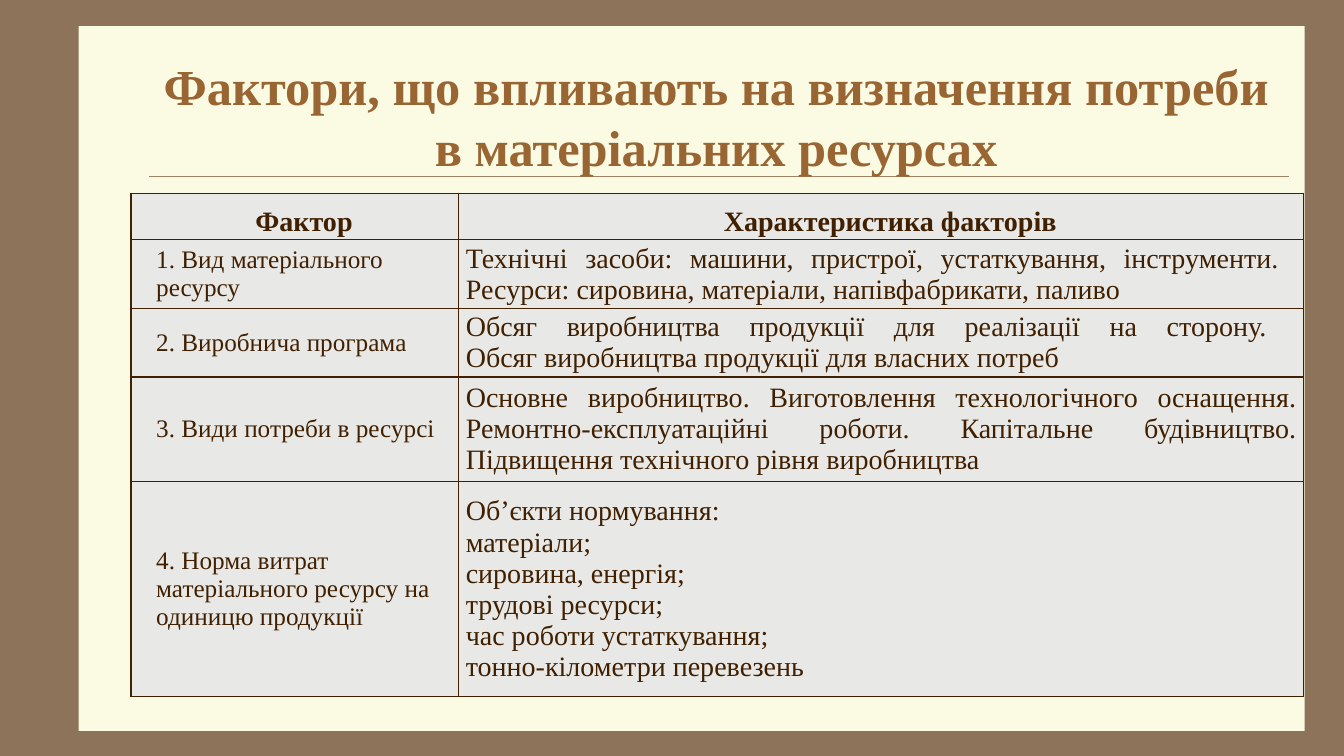
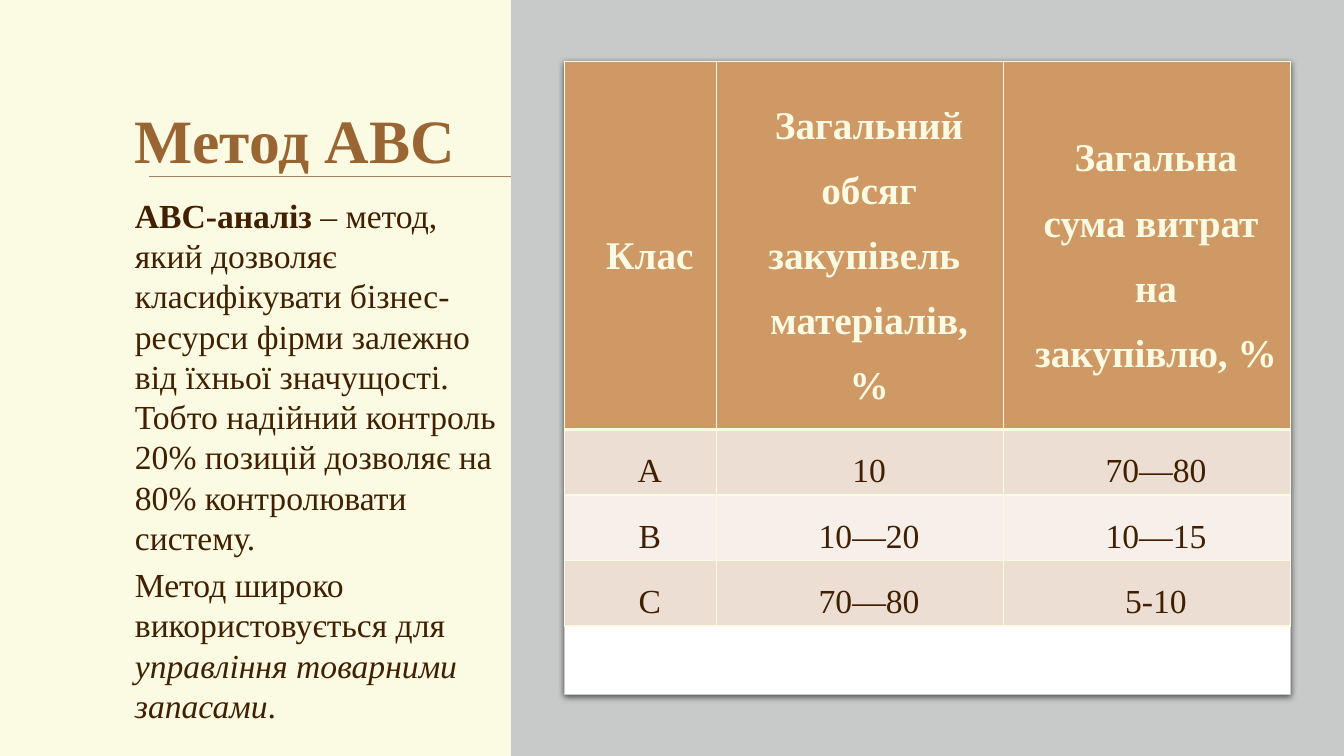
from lxml import etree
from pptx import Presentation
from pptx.dml.color import RGBColor
from pptx.enum import shapes, text
from pptx.oxml import ns
from pptx.util import Inches, Pt

COLORS = {
    "frame": "8C735A",
    "cream": "FBFAE2",
    "rule": "A08366",
    "title": "996633",
    "ink": "402000",
    "gray_cell": "E8E8E7",
    "panel": "C8CACA",
    "white": "FFFFFF",
    "header": "CE9964",
    "band_dark": "EDDED3",
    "band_light": "F6EFEA",
}
RGB = {name: RGBColor.from_string(value) for name, value in COLORS.items()}
FONT = "Times New Roman"
ALIGN = text.PP_ALIGN


def style_text(frame, size, color, bold=False, align=ALIGN.LEFT, spacing=1.0, indent=0):
    for para in frame.paragraphs:
        para.alignment = align
        para.line_spacing = spacing
        if indent:
            properties = para._p.get_or_add_pPr()
            properties.set("marL", str(Inches(indent)))
            properties.set("indent", "0")
        for span in para.runs:
            span.font.name = FONT
            span.font.size = Pt(size)
            span.font.bold = bold
            span.font.color.rgb = RGB[color]


def style_cell(cell, fill, border, margin, bottom_width=1):
    cell.margin_left = cell.margin_right = Inches(margin)
    cell.margin_top = cell.margin_bottom = 0
    cell.vertical_anchor = text.MSO_ANCHOR.MIDDLE
    properties = cell._tc.get_or_add_tcPr()
    for side in ("lnL", "lnR", "lnT", "lnB"):
        width = bottom_width if side == "lnB" else 1
        line = etree.SubElement(properties, ns.qn(f"a:{side}"), w=str(Pt(width)))
        solid = etree.SubElement(line, ns.qn("a:solidFill"))
        etree.SubElement(solid, ns.qn("a:srgbClr"), val=COLORS[border])
    cell.fill.solid()
    cell.fill.fore_color.rgb = RGB[fill]


deck = Presentation()
deck.slide_width = Inches(13.33)
deck.slide_height = Inches(7.5)

factor_rows = [
    ("Фактор", "Характеристика факторів"),
    ("1. Вид матеріального ресурсу",
     "Технічні засоби: машини, пристрої, устаткування, інструменти. \v"
     "Ресурси: сировина, матеріали, напівфабрикати, паливо"),
    ("2. Виробнича програма",
     "Обсяг виробництва продукції для реалізації на сторону. \v"
     "Обсяг виробництва продукції для власних потреб"),
    ("3. Види потреби в ресурсі",
     "Основне виробництво. Виготовлення технологічного оснащення. "
     "Ремонтно-експлуатаційні роботи. Капітальне будівництво. "
     "Підвищення технічного рівня виробництва"),
    ("4. Норма витрат матеріального ресурсу на одиницю продукції",
     "Об’єкти нормування:\nматеріали;\nсировина, енергія;\nтрудові ресурси;\n"
     "час роботи устаткування;\nтонно-кілометри перевезень"),
]
class_rows = [
    ("Клас", "Загальний обсяг закупівель \vматеріалів, %",
     "Загальна сума витрат \vна закупівлю, %"),
    ("А", "10", "70—80"),
    ("В", "10—20", "10—15"),
    ("С", "70—80", "5-10"),
]
slides = [
    {"background": "frame", "title": "Фактори, що впливають на визначення потреби в матеріальних ресурсах",
     "title_at": (1.44, 0.5, 11.33, 1.3), "title_size": 36, "title_align": ALIGN.CENTER,
     "rows": factor_rows, "table_at": (1.3, 1.92, 11.62, 4.98),
     "widths": (3.25, 8.38), "heights": (0.46, 0.68, 0.68, 1.04, 2.13)},
    {"background": "cream", "title": "Метод АВС",
     "title_at": (1.24, 0.49, 3.83, 1.77), "title_size": 44, "title_align": ALIGN.LEFT,
     "rows": class_rows, "table_at": (5.6, 0.61, 7.2, 5.6),
     "widths": (1.51, 2.84, 2.85), "heights": (3.65, 0.65, 0.65, 0.65)},
]
method_paragraphs = [
    [("АВС-аналіз", True, False),
     (" – метод, який дозволяє класифікувати бізнес-ресурси фірми залежно від їхньої значущості. "
      "Тобто надійний контроль 20% позицій дозволяє на 80% контролювати систему.", False, False)],
    [("Метод широко використовується для ", False, False),
     ("управління товарними запасами", False, True),
     (".", False, False)],
]

tables = []
for content in slides:
    page = deck.slides.add_slide(deck.slide_layouts[6])
    page.background.fill.solid()
    page.background.fill.fore_color.rgb = RGB[content["background"]]

    if content["background"] == "frame":
        sheet = page.shapes.add_shape(shapes.MSO_SHAPE.RECTANGLE, Inches(0.78), Inches(0.26),
                                      Inches(12.16), Inches(6.99))
        sheet.shadow.inherit = False
        sheet.fill.solid()
        sheet.fill.fore_color.rgb = RGB["cream"]
        sheet.line.fill.background()

    rule = page.shapes.add_connector(shapes.MSO_CONNECTOR.STRAIGHT, Inches(1.48), Inches(1.75),
                                     Inches(12.78), Inches(1.75))
    rule.line.color.rgb = RGB["rule"]
    rule.line.width = Pt(0.25)
    etree.SubElement(rule._element.spPr, ns.qn("a:effectLst"))

    title = page.shapes.add_textbox(*map(Inches, content["title_at"])).text_frame
    title.word_wrap = True
    title.vertical_anchor = text.MSO_ANCHOR.MIDDLE
    title.text = content["title"]
    style_text(title, content["title_size"], "title", True, content["title_align"])

    if content["background"] == "cream":
        body = page.shapes.add_textbox(Inches(1.24), Inches(1.88), Inches(3.83), Inches(5.35)).text_frame
        body.word_wrap = True
        for number, pieces in enumerate(method_paragraphs):
            para = body.add_paragraph() if number else body.paragraphs[0]
            if number:
                para.space_before = Pt(4.8)
            for words, bold, italic in pieces:
                para.add_run().text = words
        style_text(body, 24, "ink")
        for para, pieces in zip(body.paragraphs, method_paragraphs):
            for span, (words, bold, italic) in zip(para.runs, pieces):
                span.font.bold = bold
                span.font.italic = italic

        panel = page.shapes.add_shape(shapes.MSO_SHAPE.RECTANGLE, Inches(5.07), 0,
                                      Inches(8.26), Inches(7.5))
        panel.shadow.inherit = False
        panel.fill.solid()
        panel.fill.fore_color.rgb = RGB["panel"]
        panel.line.fill.background()

        card = page.shapes.add_shape(shapes.MSO_SHAPE.ROUNDED_RECTANGLE, Inches(5.6), Inches(0.61),
                                     Inches(7.2), Inches(6.28))
        card.adjustments[0] = 0
        card.shadow.inherit = False
        card.fill.solid()
        card.fill.fore_color.rgb = RGB["white"]
        card.line.color.rgb = RGB["panel"]
        card.line.width = Pt(0.75)
        effects = card._element.spPr.find(ns.qn("a:effectLst"))
        shadow = etree.SubElement(effects, ns.qn("a:outerShdw"), blurRad=str(Pt(4.5)),
                                  dist=str(Pt(1.5)), dir="5400000", algn="t", rotWithShape="0")
        shade = etree.SubElement(shadow, ns.qn("a:srgbClr"), val="000000")
        etree.SubElement(shade, ns.qn("a:alpha"), val="63000")

    rows = content["rows"]
    table = page.shapes.add_table(len(rows), len(rows[0]), *map(Inches, content["table_at"])).table
    table.first_row = table.horz_banding = False
    for column, width in zip(table.columns, content["widths"]):
        column.width = Inches(width)
    for row, height, values in zip(table.rows, content["heights"], rows):
        row.height = Inches(height)
        for cell, value in zip(row.cells, values):
            cell.text_frame.text = value
    tables.append(table)

factors, classes = tables
for row_number, row in enumerate(factors.rows):
    for column_number, cell in enumerate(row.cells):
        style_cell(cell, "gray_cell", "ink", 0.07)
        if row_number == 0:
            style_text(cell.text_frame, 20, "ink", True, ALIGN.CENTER, 1.35, 0.18)
        elif column_number == 0:
            style_text(cell.text_frame, 18, "ink", indent=0.18)
        else:
            style_text(cell.text_frame, 20, "ink", align=ALIGN.JUSTIFY)

for row_number, row in enumerate(classes.rows):
    is_header = row_number == 0
    band = "header" if is_header else ("band_light", "band_dark")[row_number % 2]
    for cell in row.cells:
        style_cell(cell, band, "cream", 0.13, 3 if is_header else 1)
        style_text(cell.text_frame, 28 if is_header else 24, "cream" if is_header else "ink",
                   is_header, ALIGN.CENTER, 1.5, 0.18)

deck.save("out.pptx")
